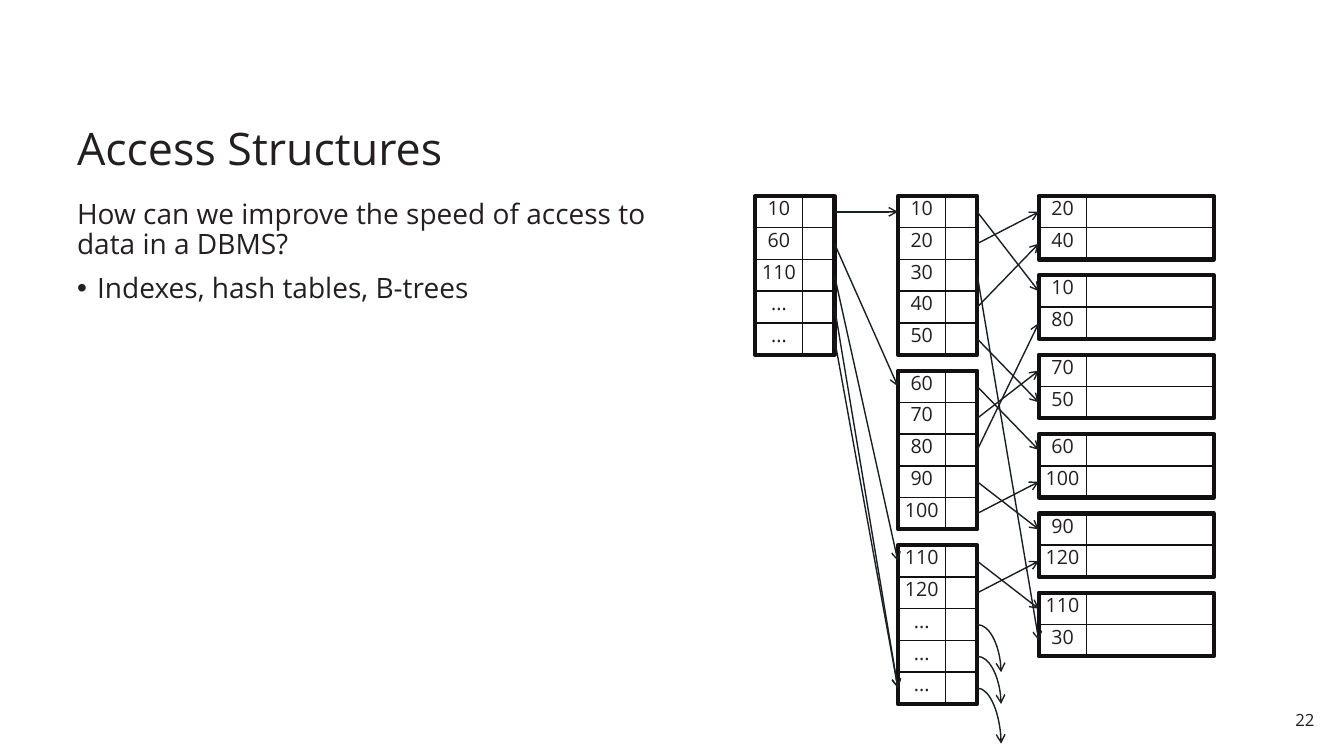
from pptx import Presentation
from pptx.dml.color import RGBColor
from pptx.enum.shapes import MSO_CONNECTOR as Connector, MSO_SHAPE as Shape
from pptx.enum.text import MSO_ANCHOR as Anchor, PP_ALIGN as Align
from pptx.oxml.ns import qn
from pptx.util import Pt
from lxml.etree import SubElement

FONT = "Open Sans"
INK, BORDER, ARROW, WHITE = "231F20", "121010", "191F22", "FFFFFF"
TOP, ROW = 140, 22.68
KEY_WIDTH, POINTER_WIDTH, RECORD_WIDTH = 34, 22.68, 91
ROOT_LEFT, INDEX_LEFT, DATA_LEFT = 539.4, 641.4, 742
ROOT = [["10", "60", "110", "...", "..."]]
INDEX = [["10", "20", "30", "40", "50"],
         ["60", "70", "80", "90", "100"],
         ["110", "120", "...", "...", "..."]]
DATA = [["20", "40"], ["10", "80"], ["70", "50"],
        ["60", "100"], ["90", "120"], ["110", "30"]]


def color(hex_code):
    return RGBColor.from_string(hex_code)


def write(paragraph, text, size=14, align=Align.LEFT, spacing=1.0, before=0, bullet=False):
    if bullet:
        properties = paragraph._p.get_or_add_pPr()
        properties.set("marL", str(Pt(14.4)))
        properties.set("indent", str(Pt(-14.4)))
        SubElement(properties, qn("a:buFont"), typeface="Arial")
        SubElement(properties, qn("a:buChar"), char="•")
    paragraph.text = text
    paragraph.alignment = align
    paragraph.line_spacing = spacing
    paragraph.space_before = Pt(before)
    paragraph.font.name = FONT
    paragraph.font.size = Pt(size)
    paragraph.font.color.rgb = color(INK)


def set_frame(frame, side=0, edge=0, wrap=True, anchor=Anchor.TOP):
    frame.margin_left = frame.margin_right = Pt(side)
    frame.margin_top = frame.margin_bottom = Pt(edge)
    frame.word_wrap = wrap
    frame.vertical_anchor = anchor


def add_text_area(slide, left, top, width, height, edge):
    area = slide.shapes.add_textbox(Pt(left), Pt(top), Pt(width), Pt(height))
    set_frame(area.text_frame, side=6, edge=edge)
    return area.text_frame


def add_box(slide, left, top, width, height, weight=1, fill=WHITE, label=None):
    box = slide.shapes.add_shape(Shape.RECTANGLE, Pt(left), Pt(top), Pt(width), Pt(height))
    box.shadow.inherit = False
    if fill:
        box.fill.solid()
        box.fill.fore_color.rgb = color(fill)
    else:
        box.fill.background()
    box.line.color.rgb = color(BORDER)
    box.line.width = Pt(weight)
    if label:
        set_frame(box.text_frame, wrap=False)
        write(box.text_frame.paragraphs[0], label, align=Align.CENTER)


def add_arrow(slide, start, end, curved=False):
    kind = Connector.CURVE if curved else Connector.STRAIGHT
    arrow = slide.shapes.add_connector(kind, *map(Pt, (*start, *end)))
    arrow.line.color.rgb = color(ARROW)
    arrow.line.width = Pt(1)
    SubElement(arrow.line._get_or_add_ln(), qn("a:tailEnd"), type="arrow")
    properties = arrow._element.spPr
    SubElement(properties, qn("a:effectLst"))
    if curved:
        properties.find(qn("a:prstGeom")).set("prst", "curvedConnector2")


def add_level(slide, blocks, left, value_width):
    centers = []
    for number, keys in enumerate(blocks):
        block_top = TOP + number * (len(keys) + 0.5) * ROW
        for row, key in enumerate(keys):
            top = block_top + row * ROW
            add_box(slide, left, top, KEY_WIDTH, ROW, label=key)
            add_box(slide, left + KEY_WIDTH, top, value_width, ROW)
            centers.append((key, top + ROW / 2))
        add_box(slide, left, block_top, KEY_WIDTH + value_width, len(keys) * ROW,
                weight=3, fill=None)
    return centers


def link_levels(slide, sources, source_left, targets, target_left):
    start_x = source_left + KEY_WIDTH + POINTER_WIDTH
    target_centers = dict(targets)
    for number, (key, y) in enumerate(sources, start=1):
        if key in target_centers:
            add_arrow(slide, (start_x, y), (target_left, target_centers[key]))
        else:
            drop = ROW * (1.75 if number == len(sources) else 1.5)
            add_arrow(slide, (start_x, y), (start_x + 17, y + drop), curved=True)


def add_words(slide):
    title = slide.shapes.title
    title.left, title.top, title.width, title.height = map(Pt, (49, 54.7, 862, 73.4))
    set_frame(title.text_frame, side=6, edge=3, anchor=Anchor.BOTTOM)
    write(title.text_frame.paragraphs[0], "Access Structures", size=32, spacing=0.9)

    body = add_text_area(slide, 49, 140, 425.5, 351, edge=3)
    write(body.paragraphs[0], "How can we improve the speed of access to data in a DBMS?",
          size=20, spacing=0.9)
    write(body.add_paragraph(), "Indexes, hash tables, B-trees",
          size=20, spacing=0.9, before=10, bullet=True)

    page = add_text_area(slide, 911, 502.6, 34, 22.3, edge=4)
    write(page.paragraphs[0], "22", size=12, align=Align.RIGHT)


def main():
    deck = Presentation()
    deck.slide_width, deck.slide_height = Pt(960), Pt(540)
    slide = deck.slides.add_slide(deck.slide_layouts[5])
    add_words(slide)
    data = add_level(slide, DATA, DATA_LEFT, RECORD_WIDTH)
    index = add_level(slide, INDEX, INDEX_LEFT, POINTER_WIDTH)
    root = add_level(slide, ROOT, ROOT_LEFT, POINTER_WIDTH)
    link_levels(slide, index, INDEX_LEFT, data, DATA_LEFT)
    link_levels(slide, root, ROOT_LEFT, index, INDEX_LEFT)
    deck.save("out.pptx")


if __name__ == "__main__":
    main()
